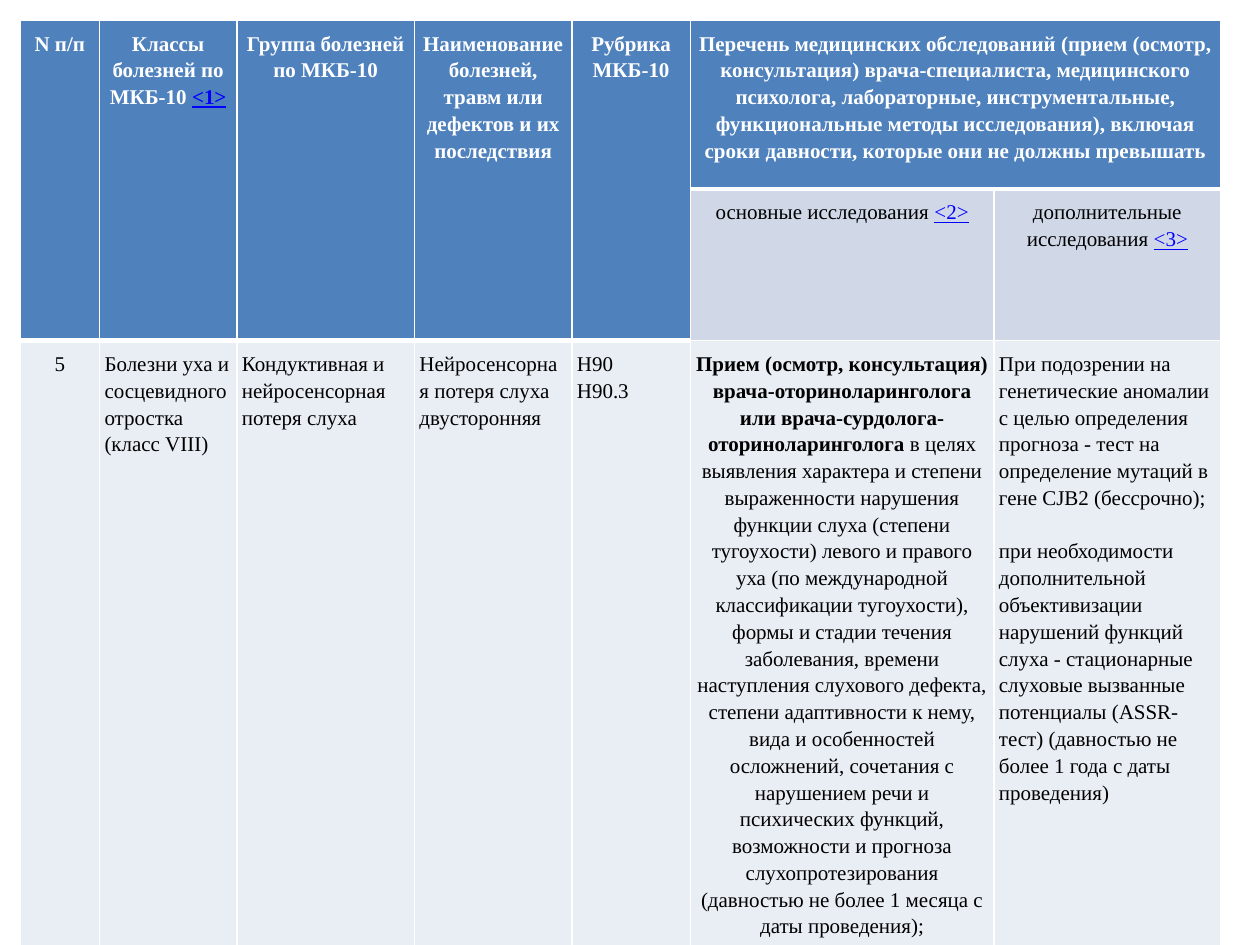
import pptx
import pptx.dml.color
import pptx.enum.text
import pptx.oxml.ns
import pptx.util
from lxml import etree

Inches = pptx.util.Inches
Pt = pptx.util.Pt
COLORS = {"header": "4F81BD", "subheader": "D0D8E8", "body": "E9EDF4",
          "white": "FFFFFF", "black": "000000", "link": "0000FF"}
FONT = "Times New Roman"
COLUMN_WIDTHS = [0.63, 1.09, 1.41, 1.25, 0.94, 2.41, 1.80]
ROW_HEIGHTS = [1.34, 0.61, 5.24]
EXAMS_COLUMN = 5

HEADERS = [
    [("N п/п", "bold")],
    [("Классы болезней по МКБ-10 ", "bold"), ("<1>", "bold link")],
    [("Группа болезней по МКБ-10", "bold")],
    [("Наименование болезней, травм или дефектов и их последствия", "bold")],
    [("Рубрика МКБ-10", "bold")],
    [("Перечень медицинских обследований (прием (осмотр, консультация) "
      "врача-специалиста, медицинского психолога, лабораторные, инструментальные, "
      "функциональные методы исследования), включая сроки давности, которые они "
      "не должны превышать", "bold")],
]
SUBHEADERS = [
    [("основные исследования ", ""), ("<2>", "link")],
    [("дополнительные исследования ", ""), ("<3>", "link")],
]
DISEASE = [
    [[("5", "")]],
    [[("Болезни уха и сосцевидного отростка (класс VIII)", "")]],
    [[("Кондуктивная и нейросенсорная потеря слуха", "")]],
    [[("Нейросенсорная потеря слуха двусторонняя", "")]],
    [[("H90", "")], [("H90.3", "")]],
    [[("Прием (осмотр, консультация) врача-оториноларинголога или "
       "врача-сурдолога-оториноларинголога ", "bold"),
      ("в целях выявления характера и степени выраженности нарушения функции слуха "
       "(степени тугоухости) левого и правого уха (по международной классификации "
       "тугоухости), формы и стадии течения заболевания, времени наступления "
       "слухового дефекта, степени адаптивности к нему, вида и особенностей "
       "осложнений, сочетания с нарушением речи и психических функций, возможности "
       "и прогноза слухопротезирования (давностью не более 1 месяца с даты "
       "проведения);", "")]],
    [[("При подозрении на генетические аномалии с целью определения прогноза - тест "
       "на определение мутаций в гене CJB2 (бессрочно);", "")],
     [("при необходимости дополнительной объективизации нарушений функций слуха - "
       "стационарные слуховые вызванные потенциалы (ASSR-тест) (давностью не более "
       "1 года с даты проведения)", "")]],
]
CENTERED_COLUMNS = (0, EXAMS_COLUMN)


def rgb(name):
    """Return the palette colour with this name."""
    return pptx.dml.color.RGBColor.from_string(COLORS[name])


def set_borders(cell, top, bottom):
    """Draw white cell borders, with top and bottom widths in points."""
    properties = cell._tc.get_or_add_tcPr()
    widths = {"lnL": 1, "lnR": 1, "lnT": top, "lnB": bottom}
    for position, (side, width) in enumerate(widths.items()):
        line = etree.Element(pptx.oxml.ns.qn(f"a:{side}"), w=str(Pt(width)))
        fill = etree.SubElement(line, pptx.oxml.ns.qn("a:solidFill"))
        etree.SubElement(fill, pptx.oxml.ns.qn("a:srgbClr"), val=COLORS["white"])
        properties.insert(position, line)


def style_cell(cell, fill, top, bottom):
    """Set the fill, margins and borders of a cell."""
    cell.fill.solid()
    cell.fill.fore_color.rgb = rgb(fill)
    cell.margin_left = cell.margin_right = Inches(0.04)
    cell.margin_top = cell.margin_bottom = Inches(0.07)
    set_borders(cell, top, bottom)


def write_cell(cell, paragraphs, color="black", centered=True, gap=0):
    """Write paragraphs of (text, style) runs into a cell."""
    frame = cell.text_frame
    for index, runs in enumerate(paragraphs):
        paragraph = frame.add_paragraph() if index else frame.paragraphs[0]
        paragraph.line_spacing = 1.15
        paragraph.alignment = (pptx.enum.text.PP_ALIGN.CENTER if centered
                               else pptx.enum.text.PP_ALIGN.LEFT)
        if index and gap:
            paragraph.space_before = Pt(gap)
        for text, style in runs:
            run = paragraph.add_run()
            run.text = text
            run.font.name = FONT
            run.font.size = Pt(12)
            run.font.bold = "bold" in style
            run.font.underline = "link" in style
            run.font.color.rgb = rgb("link" if "link" in style else color)


def add_disease_table(slide, left, top, width, height):
    """Build the table of examinations inside the given box."""
    table = slide.shapes.add_table(len(ROW_HEIGHTS), len(COLUMN_WIDTHS),
                                   left, top, width, height).table
    for column, share in zip(table.columns, COLUMN_WIDTHS):
        column.width = int(width * share / sum(COLUMN_WIDTHS))
    for row, share in zip(table.rows, ROW_HEIGHTS):
        row.height = int(height * share / sum(ROW_HEIGHTS))

    for column in range(len(COLUMN_WIDTHS)):
        tall = column < EXAMS_COLUMN
        style_cell(table.cell(0, column), "header", 1, 3)
        style_cell(table.cell(1, column), "header" if tall else "subheader",
                   3, 3 if tall else 1)
        style_cell(table.cell(2, column), "body", 3 if tall else 1, 1)
        if tall:
            table.cell(0, column).merge(table.cell(1, column))
    table.cell(0, EXAMS_COLUMN).merge(table.cell(0, EXAMS_COLUMN + 1))

    for column, runs in enumerate(HEADERS):
        write_cell(table.cell(0, column), [runs], color="white")
    for column, runs in enumerate(SUBHEADERS, EXAMS_COLUMN):
        write_cell(table.cell(1, column), [runs])
    for column, paragraphs in enumerate(DISEASE):
        write_cell(table.cell(2, column), paragraphs,
                   centered=column in CENTERED_COLUMNS,
                   gap=15.3 if column > EXAMS_COLUMN else 0)


def main():
    """Create the presentation and save it."""
    presentation = pptx.Presentation()
    presentation.slide_width = Inches(10)
    presentation.slide_height = Inches(7.5)
    slide = presentation.slides.add_slide(presentation.slide_layouts[6])
    add_disease_table(slide, Inches(0.16), Inches(0.16), Inches(9.53), Inches(7.19))
    presentation.save("out.pptx")


if __name__ == "__main__":
    main()
